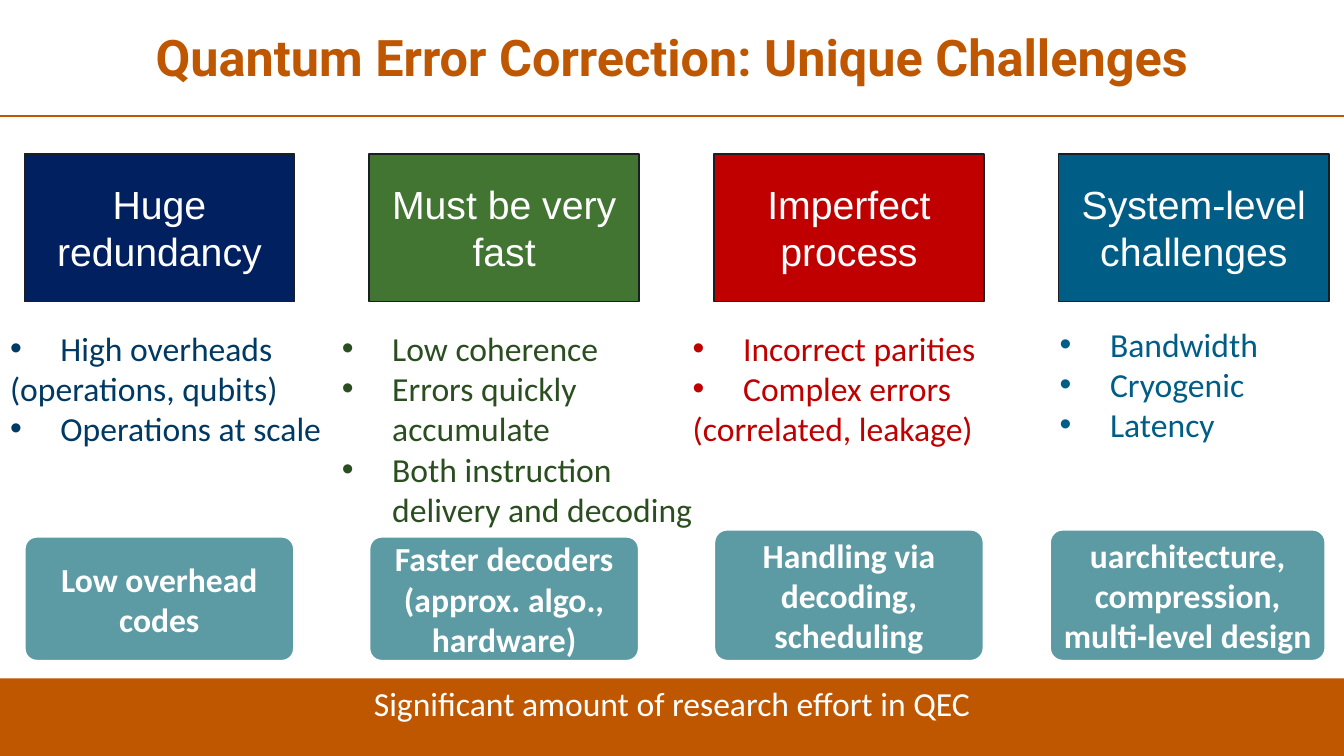
from lxml import etree
from pptx import Presentation
from pptx.dml.color import RGBColor
from pptx.enum.shapes import MSO_CONNECTOR, MSO_SHAPE
from pptx.enum.text import MSO_ANCHOR, MSO_AUTO_SIZE, PP_ALIGN
from pptx.oxml.ns import qn
from pptx.util import Inches, Pt

RECT, ROUNDED = MSO_SHAPE.RECTANGLE, MSO_SHAPE.ROUNDED_RECTANGLE
TOP, MIDDLE = MSO_ANCHOR.TOP, MSO_ANCHOR.MIDDLE
CENTER, LEFT = PP_ALIGN.CENTER, PP_ALIGN.LEFT
NO_AUTOFIT = MSO_AUTO_SIZE.NONE
STRAIGHT = MSO_CONNECTOR.STRAIGHT

ORANGE = RGBColor(0xBF, 0x57, 0x00)
TITLE_ORANGE = RGBColor(0xBE, 0x57, 0x00)
WHITE = RGBColor(0xFF, 0xFF, 0xFF)
OUTLINE = RGBColor(0x1A, 0x1F, 0x24)
TEAL = RGBColor(0x5C, 0x9B, 0xA4)
NAVY = RGBColor(0x00, 0x20, 0x60)
DARK_BLUE = RGBColor(0x00, 0x39, 0x63)
GREEN = RGBColor(0x41, 0x75, 0x31)
DARK_GREEN = RGBColor(0x2B, 0x4E, 0x20)
RED = RGBColor(0xC0, 0x00, 0x00)
BLUE = RGBColor(0x00, 0x5E, 0x86)

SLIDE_W = 13.33
FIRST_LEFT, COLUMN_STEP, BOX_W = 0.24, 3.42, 2.68


def format_text(p, size, font, color, bold=False, align=CENTER):
    p.alignment = align
    for r in p.runs:
        r.font.size = Pt(size)
        r.font.name = font
        r.font.bold = bold
        r.font.color.rgb = color


def add_box(kind, box, fill, text, size, font, outline=None, bold=False):
    """Add a filled shape with white centred text; outline is (colour, points)."""
    sp = s.shapes.add_shape(kind, *map(Inches, box))
    sp.shadow.inherit = False
    sp.fill.solid()
    sp.fill.fore_color.rgb = fill
    if outline:
        sp.line.color.rgb = outline[0]
        sp.line.width = Pt(outline[1])
    else:
        sp.line.fill.background()
    tf = sp.text_frame
    tf.word_wrap = True
    tf.vertical_anchor = MIDDLE
    tf.text = text
    format_text(tf.paragraphs[0], size, font, WHITE, bold)
    return sp


prs = Presentation()
prs.slide_width, prs.slide_height = Inches(SLIDE_W), Inches(7.5)
# The Comparison layout offers a title and four body placeholders
s = prs.slides.add_slide(prs.slide_layouts[4])

title = s.shapes.title
title.left, title.top, title.width, title.height = map(Inches, (0.09, 0.04, 13.15, 1.11))
tf = title.text_frame
tf.text = "Quantum Error Correction: Unique Challenges"
tf.vertical_anchor = MIDDLE
tf.auto_size = NO_AUTOFIT
tf.paragraphs[0].line_spacing = 0.9
format_text(tf.paragraphs[0], 36, "Roboto", TITLE_ORANGE, bold=True)

rule = s.shapes.add_connector(STRAIGHT, 0, Inches(1.15), Inches(SLIDE_W), Inches(1.15))
rule.line.color.rgb = ORANGE
rule.line.width = Pt(1.5)
etree.SubElement(rule._element.spPr, qn("a:effectLst"))

banner = add_box(RECT, (0, 6.73, SLIDE_W, 0.77), ORANGE,
                 "Significant amount of research effort in QEC", 24, "Calibri")
banner.text_frame.vertical_anchor = TOP

# Heading, heading fill, list colour, list box, list items, answer, answer box.
# Items in parentheses continue the bullet above them.
columns = [
    ("Huge redundancy", NAVY, DARK_BLUE, (0, 3.2, 3.42, 1.31),
     ["High overheads", "(operations, qubits)", "Operations at scale"],
     "Low overhead codes", (0.24, 5.32, 2.68, 1.24)),
    ("Must be very fast", GREEN, DARK_GREEN, (3.29, 3.2, 3.73, 2.12),
     ["Low coherence", "Errors quickly accumulate",
      "Both instruction delivery and decoding"],
     "Faster decoders (approx. algo., hardware)", (3.66, 5.32, 2.68, 1.24)),
    ("Imperfect process", RED, RED, (6.77, 3.2, 3.73, 1.31),
     ["Incorrect parities", "Complex errors", "(correlated, leakage)"],
     "Handling via decoding, scheduling", (7.08, 5.25, 2.68, 1.31)),
    ("System-level challenges", BLUE, BLUE, (10.41, 3.16, 2.92, 1.31),
     ["Bandwidth", "Cryogenic", "Latency"],
     "uarchitecture, compression, multi-level design", (10.41, 5.25, 2.74, 1.31)),
]

for i, (heading, fill, color, list_box, items, answer, answer_box) in enumerate(columns):
    heading_box = (FIRST_LEFT + i * COLUMN_STEP, 1.53, BOX_W, 1.46)
    add_box(RECT, heading_box, fill, heading, 28, "Arial", (OUTLINE, 1))

    body = s.placeholders[i + 1]
    body.left, body.top, body.width, body.height = map(Inches, list_box)
    tf = body.text_frame
    tf.text = "\n".join(items)
    tf.vertical_anchor = TOP
    tf.auto_size = NO_AUTOFIT
    for p in tf.paragraphs:
        p.space_before = Pt(0)
        pPr = p._p.get_or_add_pPr()
        bulleted = not p.text.startswith("(")
        indent = Inches(0.5) if bulleted else 0
        pPr.set("marL", str(indent))
        pPr.set("indent", str(-indent))
        if bulleted:
            etree.SubElement(pPr, qn("a:buFont"), typeface="Arial")
            etree.SubElement(pPr, qn("a:buChar"), char="•")
        else:
            etree.SubElement(pPr, qn("a:buNone"))
        format_text(p, 24, "Calibri", color, align=LEFT)

    sp = add_box(ROUNDED, answer_box, TEAL, answer, 24, "Calibri", (WHITE, 2), bold=True)
    sp.adjustments[0] = 0.1

prs.save("out.pptx")
